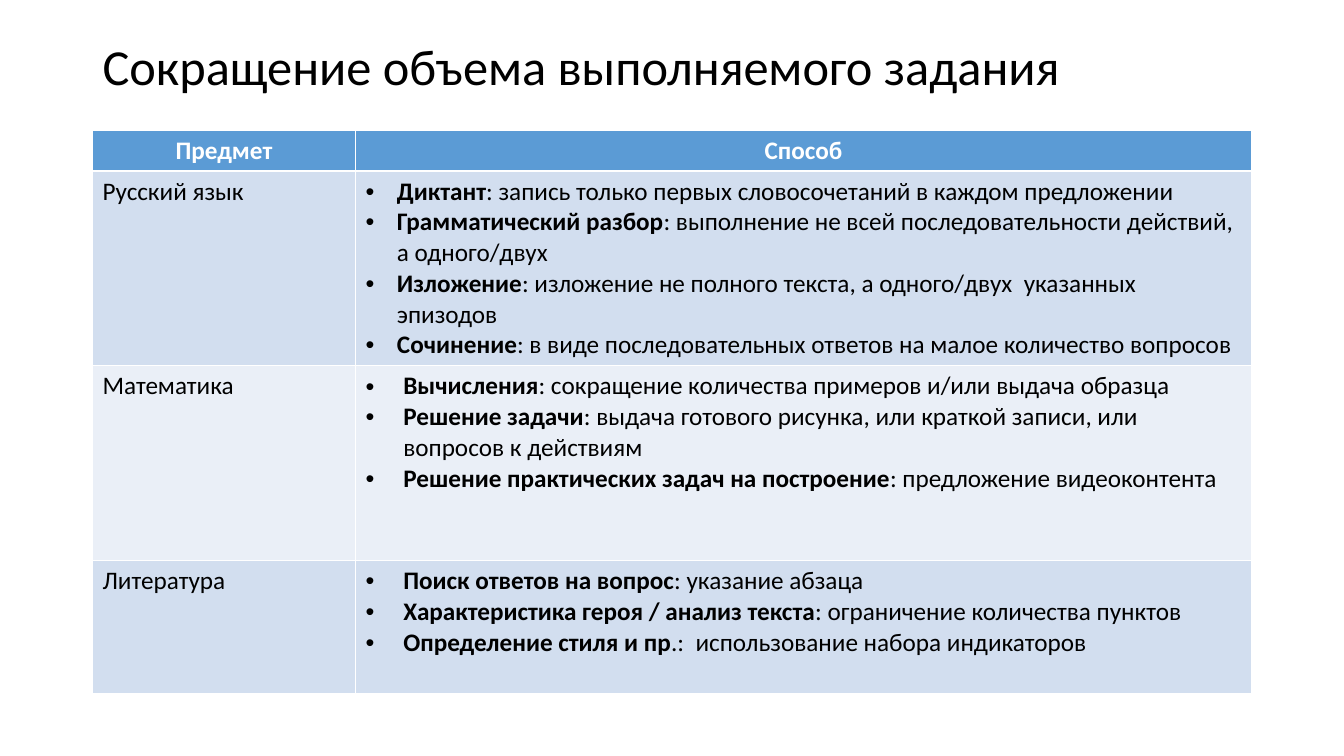
from lxml.etree import SubElement
from pptx import Presentation
from pptx.dml.color import RGBColor
from pptx.enum.text import MSO_ANCHOR, MSO_AUTO_SIZE, PP_ALIGN
from pptx.oxml.ns import qn
from pptx.util import Cm, Pt

TITLE = "Сокращение объема выполняемого задания"
HEADINGS = ["Предмет", "Способ"]
# Subject, bullet indent in cm, row height in cm, (method, explanation) pairs
SUBJECTS = [
    ("Русский язык", 0.79, 4.91, [
        ("Диктант", ": запись только первых словосочетаний в каждом предложении"),
        ("Грамматический разбор",
         ": выполнение не всей последовательности действий, а одного/двух"),
        ("Изложение", ": изложение не полного текста, а одного/двух  указанных эпизодов"),
        ("Сочинение", ": в виде последовательных ответов на малое количество вопросов"),
    ]),
    ("Математика", 0.95, 4.91, [
        ("Вычисления", ": сокращение количества примеров и/или выдача образца"),
        ("Решение задачи",
         ": выдача готового рисунка, или краткой записи, или вопросов к действиям"),
        ("Решение практических задач на построение", ": предложение видеоконтента"),
    ]),
    ("Литература", 0.95, 3.35, [
        ("Поиск ответов на вопрос", ": указание абзаца"),
        ("Характеристика героя / анализ текста", ": ограничение количества пунктов"),
        ("Определение стиля и пр", ".:  использование набора индикаторов"),
    ]),
]
LEFT, WIDTH = 2.33, 29.21
COLUMN_WIDTHS = [6.63, 22.58]
HEADER_HEIGHT = 1.03
HEADER_FILL, BAND_FILLS = "5B9BD5", ["D2DEEF", "EAEFF7"]


def color(value):
    return RGBColor.from_string(value)


def add_text(paragraph, text, size=18, bold=False, fill="000000"):
    run = paragraph.add_run()
    run.text = text
    run.font.name = "Calibri"
    run.font.size = Pt(size)
    run.font.bold = bold
    run.font.color.rgb = color(fill)


def add_bullet(paragraph, indent):
    properties = paragraph._p.get_or_add_pPr()
    properties.set("marL", str(Cm(indent)))
    properties.set("indent", str(-Cm(indent)))
    SubElement(properties, qn("a:buFont"), typeface="Arial")
    SubElement(properties, qn("a:buChar"), char="•")


def fill_cell(cell, value):
    cell.fill.solid()
    cell.fill.fore_color.rgb = color(value)


def add_title(slide):
    title = slide.shapes.title
    title.left, title.top, title.width, title.height = Cm(LEFT), Cm(1.02), Cm(WIDTH), Cm(1.45)
    frame = title.text_frame
    frame.auto_size = MSO_AUTO_SIZE.NONE
    frame.vertical_anchor = MSO_ANCHOR.MIDDLE
    paragraph = frame.paragraphs[0]
    paragraph.alignment = PP_ALIGN.LEFT
    paragraph.line_spacing = 0.9
    add_text(paragraph, TITLE, size=36)


def add_methods_table(slide):
    heights = [HEADER_HEIGHT] + [height for _, _, height, _ in SUBJECTS]
    table = slide.shapes.add_table(
        len(heights), len(HEADINGS), Cm(LEFT), Cm(3.28), Cm(WIDTH), Cm(sum(heights))
    ).table
    for column, width in zip(table.columns, COLUMN_WIDTHS):
        column.width = Cm(width)
    for row, height in zip(table.rows, heights):
        row.height = Cm(height)

    for cell, heading in zip(table.rows[0].cells, HEADINGS):
        fill_cell(cell, HEADER_FILL)
        paragraph = cell.text_frame.paragraphs[0]
        paragraph.alignment = PP_ALIGN.CENTER
        add_text(paragraph, heading, bold=True, fill="FFFFFF")

    for index, (subject, indent, _, methods) in enumerate(SUBJECTS):
        subject_cell, methods_cell = table.rows[index + 1].cells
        for cell in (subject_cell, methods_cell):
            fill_cell(cell, BAND_FILLS[index % 2])
        add_text(subject_cell.text_frame.paragraphs[0], subject)
        frame = methods_cell.text_frame
        for position, (method, explanation) in enumerate(methods):
            paragraph = frame.add_paragraph() if position else frame.paragraphs[0]
            add_bullet(paragraph, indent)
            add_text(paragraph, method, bold=True)
            add_text(paragraph, explanation)


def main():
    presentation = Presentation()
    presentation.slide_width, presentation.slide_height = Cm(33.87), Cm(19.05)
    slide = presentation.slides.add_slide(presentation.slide_layouts.get_by_name("Title Only"))
    add_title(slide)
    add_methods_table(slide)
    presentation.save("out.pptx")


if __name__ == "__main__":
    main()
